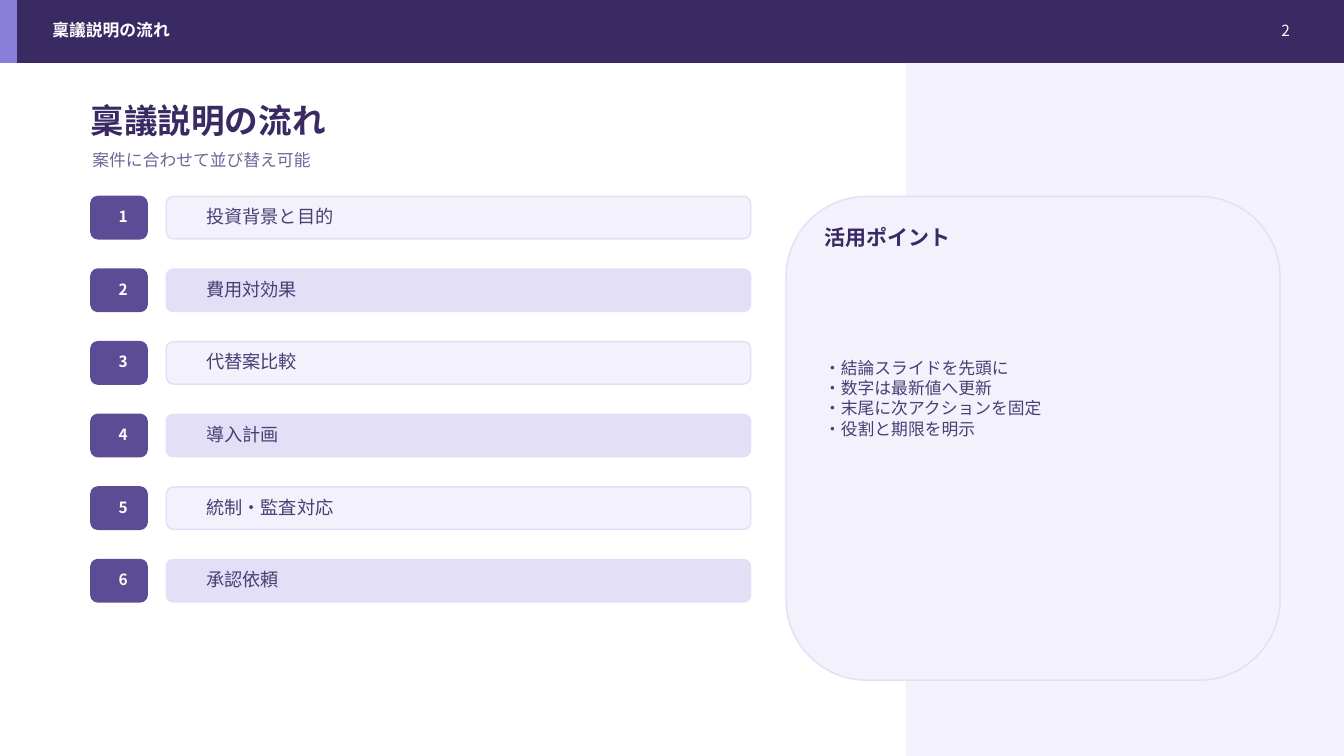
import pptx
import pptx.dml.color
import pptx.enum.shapes
import pptx.enum.text
import pptx.oxml.ns
import pptx.util
from lxml import etree

Cm = pptx.util.Cm
Kind = pptx.enum.shapes.MSO_SHAPE
Align = pptx.enum.text.PP_ALIGN


class Theme:
    font = "Noto Sans CJK JP"
    white = "FFFFFF"
    dark = "3A2A64"
    accent = "8A7ED8"
    tile = "5C4C95"
    pale = "F3F1FC"
    tint = "E3DFF6"
    body = "4A3E73"
    muted = "6F6597"
    title = 24
    head = 15
    item = 13
    text = 12
    small = 11


def add_box(kind, left, top, width, height, fill, line):
    box = slide.shapes.add_shape(kind, Cm(left), Cm(top), Cm(width), Cm(height))
    box.shadow.inherit = False
    box.fill.solid()
    box.fill.fore_color.rgb = pptx.dml.color.RGBColor.from_string(fill)
    box.line.color.rgb = pptx.dml.color.RGBColor.from_string(line)
    box.line.width = pptx.util.Pt(1)
    return box


def add_text(text, left, top, width, height, size, color, bold=False, align=Align.LEFT):
    """Add a middle-anchored text box; each line of text is a paragraph."""
    frame = slide.shapes.add_textbox(Cm(left), Cm(top), Cm(width), Cm(height)).text_frame
    frame.word_wrap = True
    frame.vertical_anchor = pptx.enum.text.MSO_ANCHOR.MIDDLE
    frame.text = text
    for para in frame.paragraphs:
        para.alignment = align
        for run in para.runs:
            run.font.size = pptx.util.Pt(size)
            run.font.bold = bold
            run.font.color.rgb = pptx.dml.color.RGBColor.from_string(color)
            run.font.name = Theme.font
            east = etree.SubElement(run._r.get_or_add_rPr(), pptx.oxml.ns.qn("a:ea"))
            east.set("typeface", Theme.font)


deck = pptx.Presentation()
deck.slide_width = Cm(33.87)
deck.slide_height = Cm(19.05)
slide = deck.slides.add_slide(deck.slide_layouts[6])

# Side panel and header bar
side = add_box(Kind.RECTANGLE, 22.86, 1.4, 11, 17.65, Theme.pale, Theme.pale)
color = side.fill._xPr.find(".//" + pptx.oxml.ns.qn("a:srgbClr"))
etree.SubElement(color, pptx.oxml.ns.qn("a:alpha")).set("val", "88000")
add_box(Kind.RECTANGLE, 0, 0, 33.87, 1.57, Theme.dark, Theme.dark)
add_box(Kind.RECTANGLE, 0, 0, 0.41, 1.57, Theme.accent, Theme.accent)
add_text("稟議説明の流れ", 1.07, 0.43, 22.35, 0.66, Theme.text, Theme.white, True)
add_text("2", 30.86, 0.43, 1.9, 0.66, Theme.small, Theme.white, align=Align.RIGHT)

# Title
add_text("稟議説明の流れ", 2.03, 2.41, 28.96, 1.22, Theme.title, Theme.dark, True)
add_text("案件に合わせて並び替え可能", 2.08, 3.66, 28.45, 0.76, Theme.text, Theme.muted)

# Agenda
items = ["投資背景と目的", "費用対効果", "代替案比較", "導入計画", "統制・監査対応", "承認依頼"]
first, step = 4.95, 1.83
for i, item in enumerate(items):
    top = first + i * step
    fill = Theme.tint if i % 2 else Theme.pale
    add_box(Kind.ROUNDED_RECTANGLE, 2.29, top, 1.42, 1.07, Theme.tile, Theme.tile)
    add_text(str(i + 1), 2.74, top + 0.25, 0.51, 0.51, Theme.small, Theme.white, True, Align.CENTER)
    add_box(Kind.ROUNDED_RECTANGLE, 4.19, top, 14.73, 1.07, fill, Theme.tint)
    add_text(item, 4.95, top + 0.25, 13.21, 0.51, Theme.item, Theme.body)

# Tips
tips = ["・結論スライドを先頭に", "・数字は最新値へ更新", "・末尾に次アクションを固定", "・役割と期限を明示"]
add_box(Kind.ROUNDED_RECTANGLE, 19.81, first, 12.45, 12.19, Theme.pale, Theme.tint)
add_text("活用ポイント", 20.52, 5.59, 10.41, 0.76, Theme.head, Theme.dark, True)
add_text("\n".join(tips), 20.52, 6.86, 10.67, 6.35, Theme.text, Theme.body)

deck.save("out.pptx")
